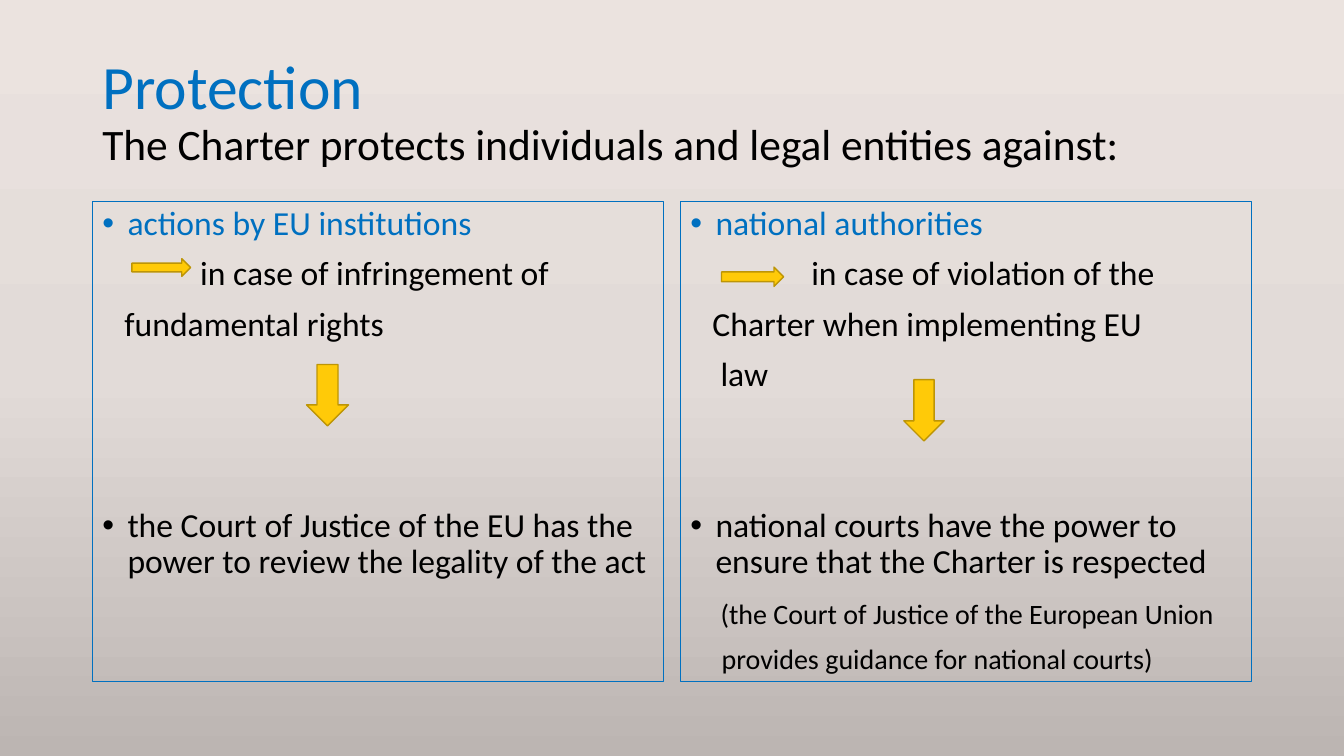
from copy import deepcopy
from dataclasses import dataclass

from lxml.etree import SubElement
from pptx import Presentation
from pptx.dml.color import RGBColor
from pptx.enum.shapes import MSO_SHAPE
from pptx.enum.text import MSO_ANCHOR
from pptx.oxml.ns import qn
from pptx.util import Inches, Pt

COLUMNS, ROWS = 160, 90
FONT = "Calibri"
COLORS = {
    "blue": "0070C0",
    "black": "000000",
    "gold": "FFCA08",
    "gold_edge": "BD9506",
}
BACKGROUND_STOPS = [(0, "EBE3DF"), (0.5, "E2DBD8"), (1, "BCB5B2")]
BULLET_INDENT = 0.25


@dataclass(frozen=True)
class Box:
    column: float
    row: float
    width: float
    height: float


@dataclass(frozen=True)
class Line:
    text: str
    color: str = "black"
    size: float = 24
    indent: float = BULLET_INDENT
    bullet: bool = False
    space_before: float = 10


@dataclass(frozen=True)
class Panel:
    box: Box
    lines: tuple[Line, ...]


@dataclass(frozen=True)
class Arrow:
    preset: MSO_SHAPE
    box: Box


TITLE_BOX = Box(11, 4.8, 138, 17.4)
TITLE_LINES = [
    Line("Protection", "blue", 44),
    Line("The Charter protects individuals and legal entities against:", size=31),
]

PANELS = [
    Panel(Box(11, 24, 68, 57.1), (
        Line("actions by EU institutions", "blue", bullet=True),
        Line("in case of infringement of", indent=0.97),
        Line("fundamental rights", indent=0.22),
        Line("the Court of Justice of the EU has the power to review the legality of the act",
             bullet=True, space_before=118),
    )),
    Panel(Box(81, 24, 68, 57.1), (
        Line("national authorities", "blue", bullet=True),
        Line("in case of violation of the", indent=1.2),
        Line("Charter when implementing EU", indent=0.22),
        Line("law", indent=0.3),
        Line("national courts have the power to ensure that the Charter is respected",
             bullet=True, space_before=82),
        Line("(the Court of Justice of the European Union",
             size=20, indent=0.3, space_before=14),
        Line("provides guidance for national courts)", size=20, indent=0.31),
    )),
]

ARROWS = [
    Arrow(MSO_SHAPE.DOWN_ARROW, Box(36.5, 43.4, 5, 7.3)),
    Arrow(MSO_SHAPE.RIGHT_ARROW, Box(85.9, 31.8, 7.4, 2.3)),
    Arrow(MSO_SHAPE.DOWN_ARROW, Box(107.6, 45.2, 4.8, 7.3)),
    Arrow(MSO_SHAPE.RIGHT_ARROW, Box(15.7, 30.8, 7, 2.1)),
]


def rgb(name: str) -> RGBColor:
    return RGBColor.from_string(COLORS[name])


def place(presentation, box: Box) -> tuple[int, int, int, int]:
    column = presentation.slide_width / COLUMNS
    row = presentation.slide_height / ROWS
    return (round(box.column * column), round(box.row * row),
            round(box.width * column), round(box.height * row))


def paint_background(slide) -> None:
    fill = slide.background.fill
    fill.gradient()
    fill.gradient_angle = 270
    stop_list = slide.element.find(".//" + qn("a:gsLst"))
    stop_list.append(deepcopy(stop_list[0]))
    for stop, (position, color) in zip(fill.gradient_stops, BACKGROUND_STOPS):
        stop.position = position
        stop.color.rgb = RGBColor.from_string(color)


def add_run(paragraph, line: Line) -> None:
    run = paragraph.add_run()
    run.text = line.text
    run.font.name = FONT
    run.font.size = Pt(line.size)
    run.font.color.rgb = rgb(line.color)


def add_text_box(presentation, slide, box: Box):
    shape = slide.shapes.add_textbox(*place(presentation, box))
    shape.text_frame.word_wrap = True
    return shape


def draw_title(presentation, slide) -> None:
    frame = add_text_box(presentation, slide, TITLE_BOX).text_frame
    frame.vertical_anchor = MSO_ANCHOR.MIDDLE
    paragraph = frame.paragraphs[0]
    paragraph.line_spacing = 0.9
    heading, subheading = TITLE_LINES
    add_run(paragraph, heading)
    paragraph.add_line_break()
    add_run(paragraph, subheading)


def format_paragraph(paragraph, line: Line) -> None:
    paragraph.line_spacing = 0.9
    paragraph.space_before = Pt(line.space_before)
    properties = paragraph._p.get_or_add_pPr()
    properties.set("marL", str(Inches(line.indent)))
    if line.bullet:
        properties.set("indent", str(-Inches(BULLET_INDENT)))
        SubElement(properties, qn("a:buFont"), typeface="Arial")
        SubElement(properties, qn("a:buChar"), char="•")


def draw_panel(presentation, slide, panel: Panel) -> None:
    shape = add_text_box(presentation, slide, panel.box)
    shape.line.color.rgb = rgb("blue")
    shape.line.width = Pt(0.75)
    frame = shape.text_frame
    for index, line in enumerate(panel.lines):
        paragraph = frame.add_paragraph() if index else frame.paragraphs[0]
        format_paragraph(paragraph, line)
        add_run(paragraph, line)


def draw_arrow(presentation, slide, arrow: Arrow) -> None:
    shape = slide.shapes.add_shape(arrow.preset, *place(presentation, arrow.box))
    shape.shadow.inherit = False
    shape.fill.solid()
    shape.fill.fore_color.rgb = rgb("gold")
    shape.line.color.rgb = rgb("gold_edge")
    shape.line.width = Pt(1)


def main() -> None:
    presentation = Presentation()
    presentation.slide_width = Inches(13.33)
    presentation.slide_height = Inches(7.5)
    slide = presentation.slides.add_slide(presentation.slide_layouts[6])
    paint_background(slide)
    draw_title(presentation, slide)
    for panel in PANELS:
        draw_panel(presentation, slide, panel)
    for arrow in ARROWS:
        draw_arrow(presentation, slide, arrow)
    presentation.save("out.pptx")


if __name__ == "__main__":
    main()
